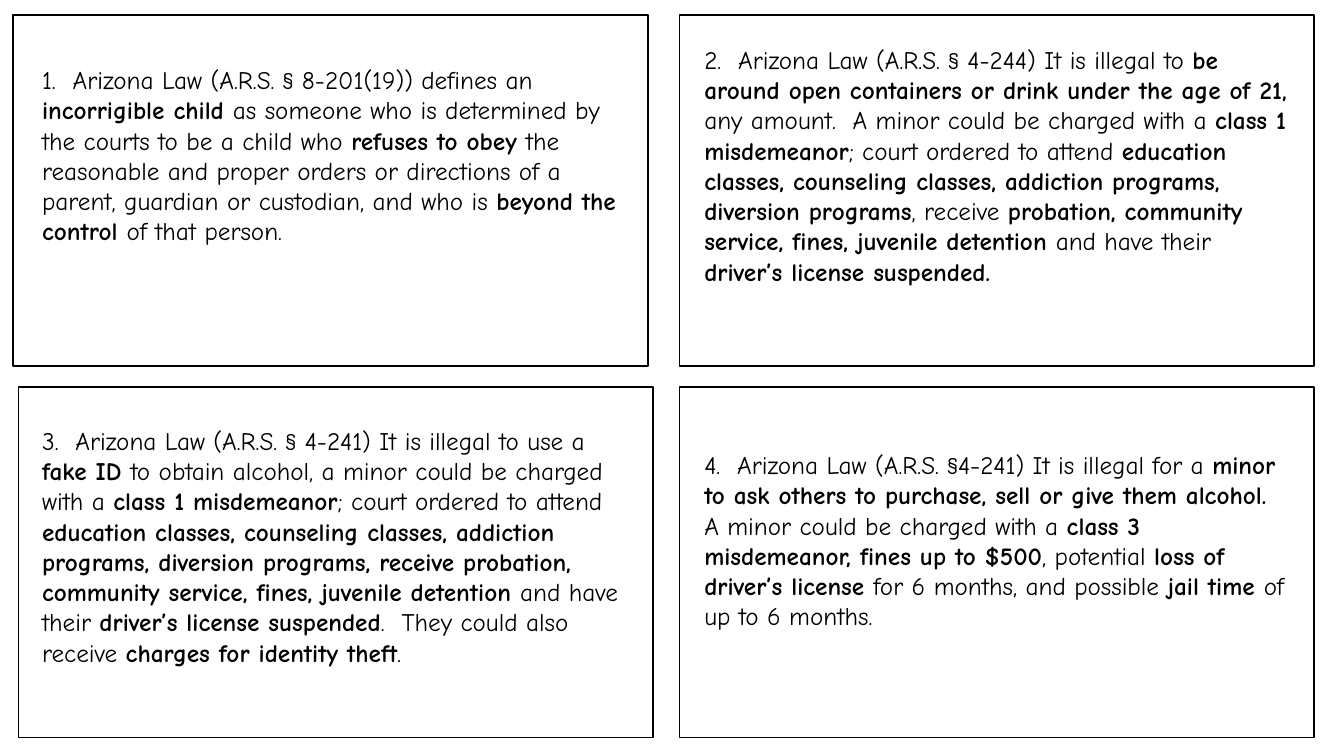
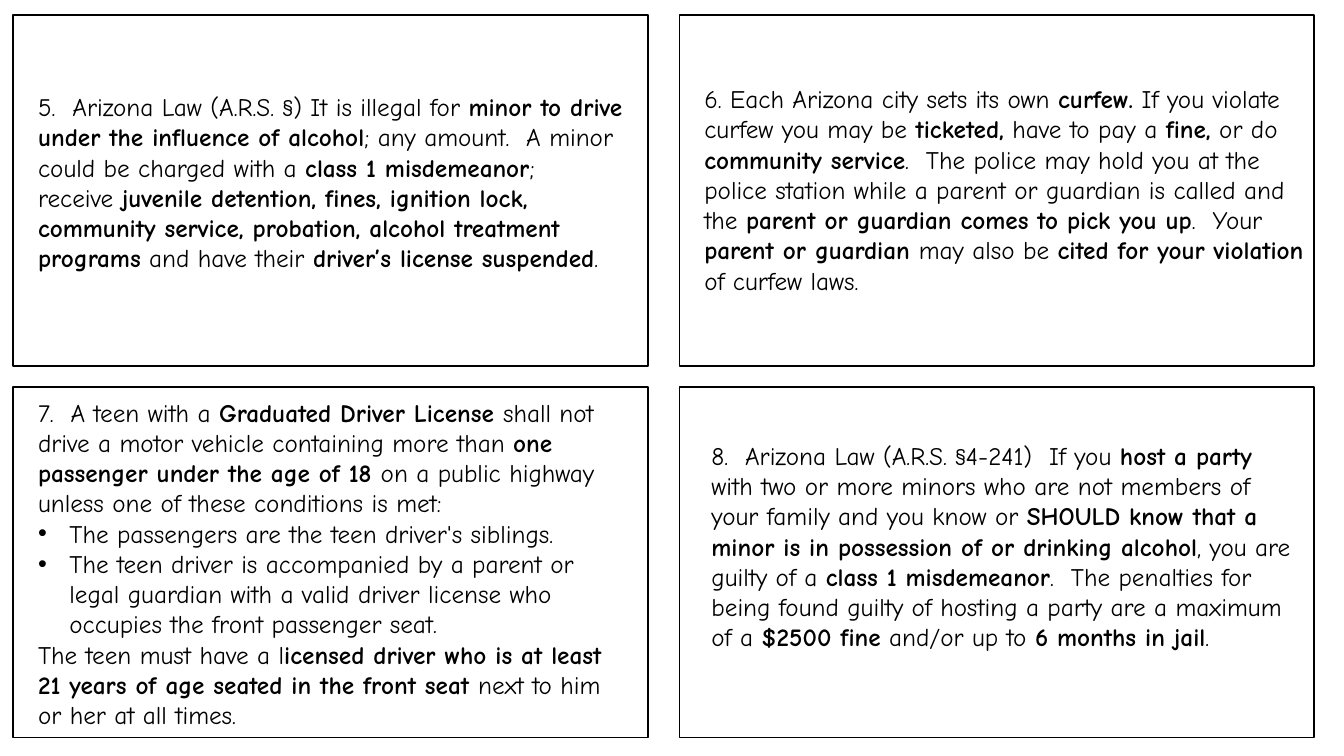
import pptx
import pptx.dml.color
import pptx.enum.shapes
import pptx.enum.text
import pptx.oxml.ns
import pptx.util
from lxml import etree
from pptx.util import Cm

FONT = "Comic Neue"
FONT_SIZE = pptx.util.Pt(18)
INK = "000000"
PAPER = "FFFFFF"
BOLD_MARK = "*"
BULLET = "• "
BULLET_INDENT = Cm(0.79)

FRAME_WIDTH, FRAME_HEIGHT = 16, 8.84
COLUMNS = (0.33, 17.12)
ROWS = (0.38, 9.75)

# Lengths are in centimetres; *stars* enclose bold words.
# Cards run left to right, then down; nudge shifts a frame off its column.
PAGES = [
    [
        {"text_at": (0.81, 1.5, 15.24, 4.88), "paragraphs": [
            "1.  Arizona Law (A.R.S. § 8-201(19)) defines an *incorrigible child *as someone who "
            "is determined by the courts to be a child who *refuses to obey *the reasonable and "
            "proper orders or directions of a parent, guardian or custodian, and who is "
            "*beyond the control *of that person."]},
        {"text_at": (17.5, 0.99, 15.24, 7.19), "paragraphs": [
            "2.  Arizona Law (A.R.S. § 4-244) It is illegal to *be around open containers or "
            "drink under the age of 21,* any amount.  A minor could be charged with a *class 1 "
            "misdemeanor*; court ordered to attend *education classes, counseling classes, "
            "addiction programs, diversion programs*, receive *probation, community service, "
            "fines, juvenile detention *and have their *driver’s license suspended.*"]},
        {"text_at": (0.81, 10.59, 15.24, 7.19), "nudge": 0.13, "paragraphs": [
            "3.  Arizona Law (A.R.S. § 4-241) It is illegal to use a *fake ID *to obtain "
            "alcohol, a minor could be charged with a *class 1 misdemeanor*; court ordered to "
            "attend *education classes, counseling classes, addiction programs, diversion "
            "programs, receive probation, community service, fines, juvenile detention *and "
            "have their *driver’s license suspended*.  They could also receive *charges for "
            "identity theft*."]},
        {"text_at": (17.5, 11.2, 15.24, 4.88), "paragraphs": [
            "4.  Arizona Law (A.R.S. §4-241) It is illegal for a *minor to ask others to "
            "purchase, sell or give them alcohol. *A minor could be charged with a *class 3 "
            "misdemeanor, fines up to $500*, potential *loss of driver’s license *for 6 months, "
            "and possible *jail time *of up to 6 months."]},
    ],
    [
        {"text_at": (0.71, 2.18, 15.24, 5.64), "paragraphs": [
            "5.  Arizona Law (A.R.S. §) It is illegal for *minor to drive under the influence "
            "of alcohol*; any amount.  A minor could be charged with a *class 1 misdemeanor*;  "
            "receive *juvenile detention, fines, ignition lock, community service, probation, "
            "alcohol treatment programs* and have their *driver’s license suspended*."]},
        {"text_at": (17.5, 1.98, 15.62, 6.4), "paragraphs": [
            "6. Each Arizona city sets its own *curfew.* If you violate curfew you may be "
            "*ticketed,* have to pay a *fine,* or do *community service*.  The police may hold "
            "you at the police station while a parent or guardian is called and the *parent or "
            "guardian comes to pick you up*.  Your *parent or guardian *may also be *cited for "
            "your violation *of curfew laws."]},
        {"text_at": (0.71, 9.88, 15.24, 8.71), "paragraphs": [
            "7.  A teen with a *Graduated Driver License *shall not drive a motor vehicle "
            "containing more than *one passenger under the age of 18 *on a public highway "
            "unless one of these conditions is met:",
            "• The passengers are the teen driver's siblings.",
            "• The teen driver is accompanied by a parent or legal guardian with a valid driver "
            "license who occupies the front passenger seat.",
            "The teen must have a l*icensed driver who is at least 21 years of age seated in "
            "the front seat *next to him or her at all times."]},
        {"text_at": (17.68, 10.97, 15.24, 6.4), "paragraphs": [
            "8.  Arizona Law (A.R.S. §4-241)  If you *host a party* with two or more minors who "
            "are not members of your family and you know or *SHOULD know that a minor is in "
            "possession of or drinking alcohol*, you are guilty of a *class 1 misdemeanor*.  "
            "The penalties for being found guilty of hosting a party are a maximum of a *$2500 "
            "fine* and/or up to *6 months in jail*."]},
    ],
]


def color(value):
    return pptx.dml.color.RGBColor.from_string(value)


def add_frame(page, left, top):
    frame = page.shapes.add_shape(
        pptx.enum.shapes.MSO_SHAPE.RECTANGLE,
        Cm(left), Cm(top), Cm(FRAME_WIDTH), Cm(FRAME_HEIGHT))
    frame.shadow.inherit = False
    frame.fill.solid()
    frame.fill.fore_color.rgb = color(PAPER)
    frame.line.color.rgb = color(INK)
    frame.line.width = pptx.util.Pt(1)


def add_bullet(para):
    properties = para._p.get_or_add_pPr()
    properties.set("marL", str(BULLET_INDENT))
    properties.set("indent", str(-BULLET_INDENT))
    for tag, name, value in (("a:buFont", "typeface", "Arial"),
                             ("a:buChar", "char", BULLET.strip())):
        etree.SubElement(properties, pptx.oxml.ns.qn(tag)).set(name, value)


def add_spans(para, text):
    """Add runs, with every second part between bold marks in bold."""
    for index, part in enumerate(text.split(BOLD_MARK)):
        if part:
            span = para.add_run()
            span.text = part
            span.font.name = FONT
            span.font.size = FONT_SIZE
            span.font.bold = index % 2 == 1
            span.font.color.rgb = color(INK)


def add_text(page, place, paragraphs):
    box = page.shapes.add_textbox(*map(Cm, place))
    frame = box.text_frame
    frame.word_wrap = True
    frame.auto_size = pptx.enum.text.MSO_AUTO_SIZE.SHAPE_TO_FIT_TEXT
    for index, text in enumerate(paragraphs):
        para = frame.add_paragraph() if index else frame.paragraphs[0]
        if text.startswith(BULLET):
            add_bullet(para)
        add_spans(para, text.removeprefix(BULLET))


def main():
    deck = pptx.Presentation()
    deck.slide_width, deck.slide_height = Cm(33.87), Cm(19.05)
    for cards in PAGES:
        page = deck.slides.add_slide(deck.slide_layouts[6])
        for index, card in enumerate(cards):
            row, column = divmod(index, len(COLUMNS))
            add_frame(page, COLUMNS[column] + card.get("nudge", 0), ROWS[row])
            add_text(page, card["text_at"], card["paragraphs"])
    deck.save("out.pptx")


if __name__ == "__main__":
    main()
